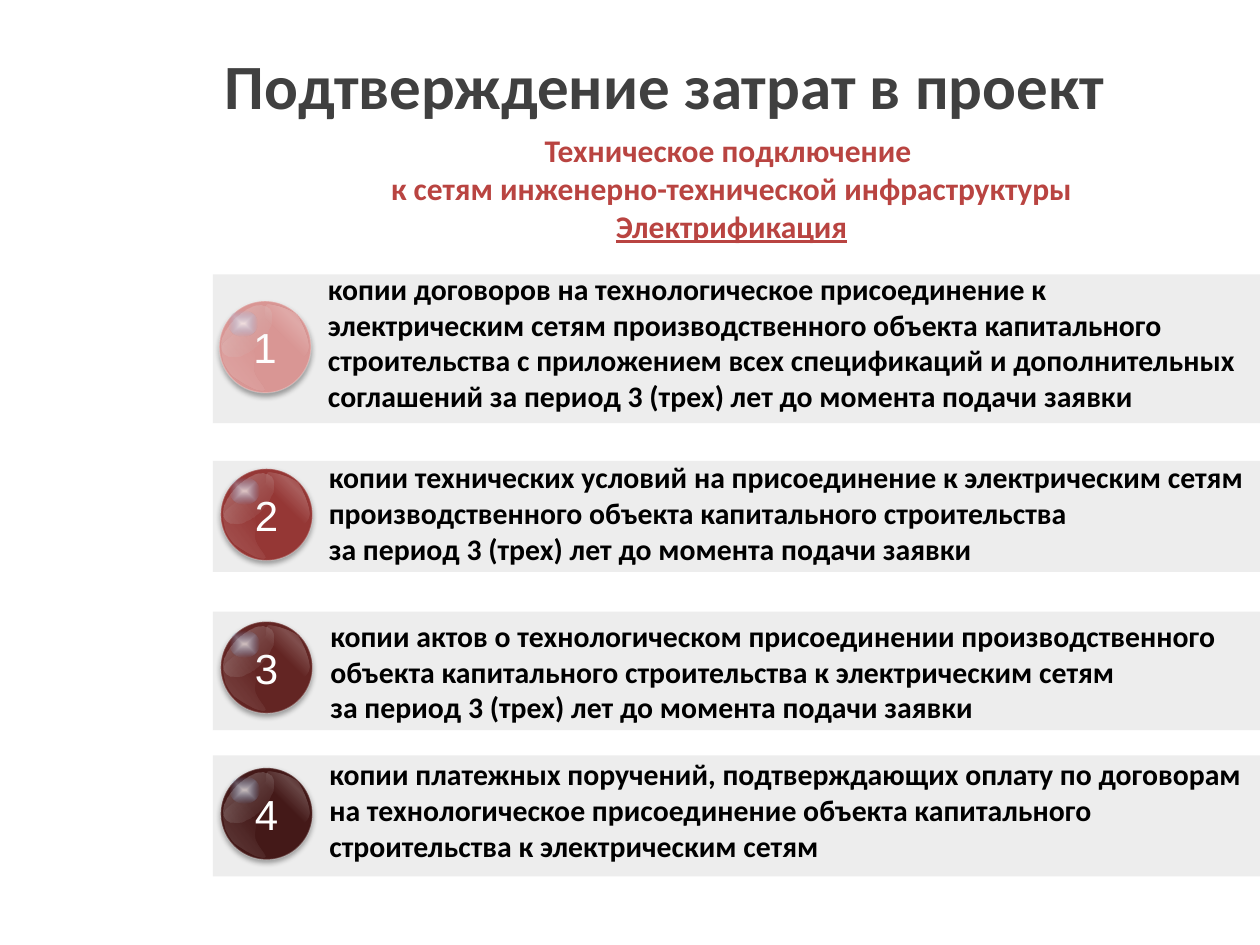
"""Build a slide listing four numbered documents that confirm project costs."""
from dataclasses import dataclass
from typing import NamedTuple

from lxml import etree
from pptx import Presentation
from pptx.dml.color import RGBColor
from pptx.enum.shapes import MSO_SHAPE
from pptx.enum.text import MSO_ANCHOR, MSO_AUTO_SIZE, PP_ALIGN
from pptx.oxml import parse_xml
from pptx.oxml.ns import nsdecls, qn
from pptx.util import Cm, Pt

RECTANGLE, OVAL = MSO_SHAPE.RECTANGLE, MSO_SHAPE.OVAL
LEFT, CENTER = PP_ALIGN.LEFT, PP_ALIGN.CENTER
TOP, MIDDLE = MSO_ANCHOR.TOP, MSO_ANCHOR.MIDDLE
NO_FIT, GROW = MSO_AUTO_SIZE.NONE, MSO_AUTO_SIZE.SHAPE_TO_FIT_TEXT
TITLE_ONLY = 5

BAR_LEFT, BAR_WIDTH = 4.29, 21.11
BALL_SIZE = 1.85


@dataclass(frozen=True)
class Theme:
    """Colours, fonts and type sizes of the slide."""
    heading: str = "404040"
    accent: str = "B94441"
    ink: str = "000000"
    white: str = "FFFFFF"
    bar: str = "A6A6A6"
    shade: str = "B6B6B6"
    sparkle: str = "67ABF5"
    text_font: str = "Calibri"
    number_font: str = "Arial"
    title_size: int = 36
    number_size: int = 24
    subtitle_size: int = 18
    item_size: int = 17


class Place(NamedTuple):
    """Left, top, width and height in centimetres."""
    left: float
    top: float
    width: float
    height: float

    def lengths(self) -> tuple:
        """Return the four measures as slide lengths."""
        return tuple(Cm(value) for value in self)


class Item(NamedTuple):
    """One numbered document and where its parts stand."""
    text: str
    color: str
    bar: Place
    ball: Place
    box: Place


class Stop(NamedTuple):
    """One gradient stop; position and opacity are percentages."""
    position: int
    color: str
    opacity: int


class Gloss(NamedTuple):
    """An oval highlight, measured in percent of the ball's size."""
    area: Place
    rotation: int
    stops: tuple
    direction: str


class Reflection(NamedTuple):
    """A curved highlight of Bezier points in percent of the ball's size."""
    points: tuple
    stops: tuple
    direction: str


THEME = Theme()
DOWN = '<a:lin ang="5400000" scaled="0"/>'
DIAGONAL = '<a:lin ang="8520000" scaled="0"/>'
FROM_MIDDLE = '<a:path path="shape"><a:fillToRect l="50000" t="50000" r="50000" b="50000"/></a:path>'
FROM_CORNER = '<a:path path="circle"><a:fillToRect t="100000" r="100000"/></a:path>'

GLOSSES = (
    Gloss(Place(-4, 14, 68, 37), 315, (Stop(0, THEME.white, 33), Stop(100, THEME.shade, 0)), DOWN),
    Gloss(Place(10, 10, 32, 29), 0, (Stop(0, THEME.white, 65), Stop(100, THEME.sparkle, 0)), FROM_MIDDLE),
    Gloss(Place(37, 53, 68, 37), 135, (Stop(0, THEME.white, 33), Stop(20, THEME.shade, 0)), DOWN),
)
REFLECTIONS = (
    Reflection(
        ((53, 4), (48, 4), (51, 12), (49, 16), (48, 19), (36, 21), (42, 27),
         (44, 36), (77, 47), (79, 56), (82, 67), (79, 67), (84, 66),
         (86, 64), (97, 58), (97, 49), (97, 41), (90, 23), (84, 15),
         (75, 8), (59, 4), (53, 4)),
        (Stop(50, THEME.white, 0), Stop(74, THEME.white, 19), Stop(100, THEME.white, 0)),
        FROM_CORNER),
    Reflection(
        ((33, 27), (30, 27), (21, 33), (15, 37), (11, 41), (5, 44), (4, 48),
         (1, 53), (4, 62), (5, 67), (8, 73), (11, 78), (15, 82),
         (21, 86), (27, 90), (33, 93), (38, 96), (48, 99), (49, 96),
         (49, 93), (40, 84), (38, 77), (36, 70), (40, 64), (38, 56),
         (37, 49), (33, 38), (32, 34), (30, 29), (36, 27), (33, 27)),
        (Stop(0, THEME.white, 0), Stop(28, THEME.white, 0), Stop(74, THEME.white, 11)),
        DIAGONAL),
)
ITEMS = (
    Item("копии договоров на технологическое присоединение к электрическим сетям "
         "производственного объекта капитального строительства с приложением всех "
         "спецификаций и дополнительных соглашений за период 3 (трех) лет до момента подачи заявки",
         "D99694", Place(BAR_LEFT, 5.53, BAR_WIDTH, 3), Place(4.42, 6.07, BALL_SIZE, BALL_SIZE),
         Place(6.36, 5.33, 19.02, 3.18)),
    Item("копии технических условий на присоединение к электрическим сетям "
         "производственного объекта капитального строительства \v"
         "за период 3 (трех) лет до момента подачи заявки",
         "953735", Place(BAR_LEFT, 9.29, BAR_WIDTH, 2.24), Place(4.45, 9.45, BALL_SIZE, BALL_SIZE),
         Place(6.38, 9.13, 19.02, 2.44)),
    Item("копии актов о технологическом присоединении производственного объекта "
         "капитального строительства к электрическим сетям \v"
         "за период 3 (трех) лет до момента подачи заявки",
         "632523", Place(BAR_LEFT, 12.33, BAR_WIDTH, 2.39), Place(4.45, 12.53, BALL_SIZE, BALL_SIZE),
         Place(6.41, 12.33, 19.02, 2.44)),
    Item("копии платежных поручений, подтверждающих оплату по договорам на технологическое "
         "присоединение объекта капитального строительства к электрическим сетям",
         "441918", Place(BAR_LEFT, 15.23, BAR_WIDTH, 2.44), Place(4.45, 15.48, BALL_SIZE, BALL_SIZE),
         Place(6.39, 15.12, 19.1, 2.44)),
)


def write(box, text: str, *, size: int, color: str, font: str = THEME.text_font, bold: bool = True,
          underline_last: bool = False, align=LEFT, anchor=TOP, fit=GROW) -> None:
    """Fill a box with formatted text, one paragraph a line."""
    frame = box.text_frame
    frame.word_wrap, frame.auto_size, frame.vertical_anchor = True, fit, anchor
    frame.text = text
    for para in frame.paragraphs:
        para.alignment = align
        for span in para.runs:
            span.font.name, span.font.size, span.font.bold = font, Pt(size), bold
            span.font.color.rgb = RGBColor.from_string(color)
    if underline_last:
        frame.paragraphs[-1].runs[0].font.underline = True


def set_opacity(fill_parent, percent: int) -> None:
    """Make the solid fill below an element partly transparent."""
    color = fill_parent.find(qn("a:solidFill"))[0]
    etree.SubElement(color, qn("a:alpha"), val=str(percent * 1000))


def add_plain(shapes, kind, place: Place, color: str):
    """Add a flat shape without outline."""
    shape = shapes.add_shape(kind, *place.lengths())
    shape.shadow.inherit = False
    shape.fill.solid()
    shape.fill.fore_color.rgb = RGBColor.from_string(color)
    shape.line.fill.background()
    return shape


def set_gradient(shape, stops: tuple, direction: str) -> None:
    """Replace a shape's fill with a translucent gradient."""
    shape.shadow.inherit = False
    shape.line.fill.background()
    shape.fill.background()
    marks = "".join(
        f'<a:gs pos="{stop.position * 1000}"><a:srgbClr val="{stop.color}">'
        f'<a:alpha val="{stop.opacity * 1000}"/></a:srgbClr></a:gs>' for stop in stops)
    gradient = parse_xml(f'<a:gradFill {nsdecls("a")} rotWithShape="1">'
                         f'<a:gsLst>{marks}</a:gsLst>{direction}</a:gradFill>')
    properties = shape._element.spPr
    properties.replace(properties.find(qn("a:noFill")), gradient)


def bend_lines(outline) -> None:
    """Join each three straight segments into one cubic curve."""
    lines = list(outline._element.iter(qn("a:lnTo")))
    for start in range(0, len(lines), 3):
        curve = etree.Element(qn("a:cubicBezTo"))
        lines[start].addprevious(curve)
        for line in lines[start:start + 3]:
            curve.append(line[0])
            line.getparent().remove(line)


def add_ball(slide, number: int, item: Item) -> None:
    """Draw a glossy numbered ball as one group."""
    shapes = slide.shapes.add_group_shape().shapes
    ball = add_plain(shapes, OVAL, item.ball, item.color)
    ball.line.color.rgb = RGBColor.from_string(THEME.white)
    ball.line.width = Pt(0.75)
    properties = ball._element.spPr
    set_opacity(properties.find(qn("a:ln")), 25)
    properties.find(qn("a:effectLst")).append(parse_xml(
        f'<a:outerShdw {nsdecls("a")} blurRad="{Pt(3.1)}" dist="{Pt(1.8)}" dir="5400000" '
        f'rotWithShape="0"><a:srgbClr val="{THEME.ink}"><a:alpha val="35000"/></a:srgbClr></a:outerShdw>'))
    write(ball, str(number), size=THEME.number_size, color=THEME.white, font=THEME.number_font,
          bold=False, align=CENTER, anchor=MIDDLE, fit=NO_FIT)
    unit = BALL_SIZE / 100
    for area, rotation, stops, direction in GLOSSES:
        place = Place(item.ball.left + area.left * unit, item.ball.top + area.top * unit,
                      area.width * unit, area.height * unit)
        oval = add_plain(shapes, OVAL, place, THEME.white)
        oval.rotation = rotation
        set_gradient(oval, stops, direction)
    for points, stops, direction in REFLECTIONS:
        builder = shapes.build_freeform(*points[0], scale=Cm(unit))
        builder.add_line_segments(points[1:], close=True)
        outline = builder.convert_to_shape(Cm(item.ball.left), Cm(item.ball.top))
        bend_lines(outline)
        set_gradient(outline, stops, direction)


def main() -> None:
    """Build and save the deck."""
    deck = Presentation()
    deck.slide_width, deck.slide_height = Cm(25.4), Cm(19.05)
    slide = deck.slides.add_slide(deck.slide_layouts[TITLE_ONLY])
    title = slide.shapes.title
    title.left, title.top, title.width, title.height = Place(4.28, 0.21, 20.9, 2.97).lengths()
    write(title, "Подтверждение затрат в проект", size=THEME.title_size, color=THEME.heading,
          anchor=MIDDLE, fit=NO_FIT)
    subtitle = slide.shapes.add_textbox(*Place(4.4, 2.52, 20.7, 3.33).lengths())
    write(subtitle, "Техническое подключение \vк сетям инженерно-технической инфраструктуры\nЭлектрификация",
          size=THEME.subtitle_size, color=THEME.accent, underline_last=True, align=CENTER)
    for item in reversed(ITEMS):
        bar = add_plain(slide.shapes, RECTANGLE, item.bar, THEME.bar)
        set_opacity(bar._element.spPr, 20)
    for number, item in enumerate(ITEMS, start=1):
        add_ball(slide, number, item)
    for item in ITEMS:
        box = slide.shapes.add_textbox(*item.box.lengths())
        write(box, item.text, size=THEME.item_size, color=THEME.ink)
    deck.save("out.pptx")


if __name__ == "__main__":
    main()
